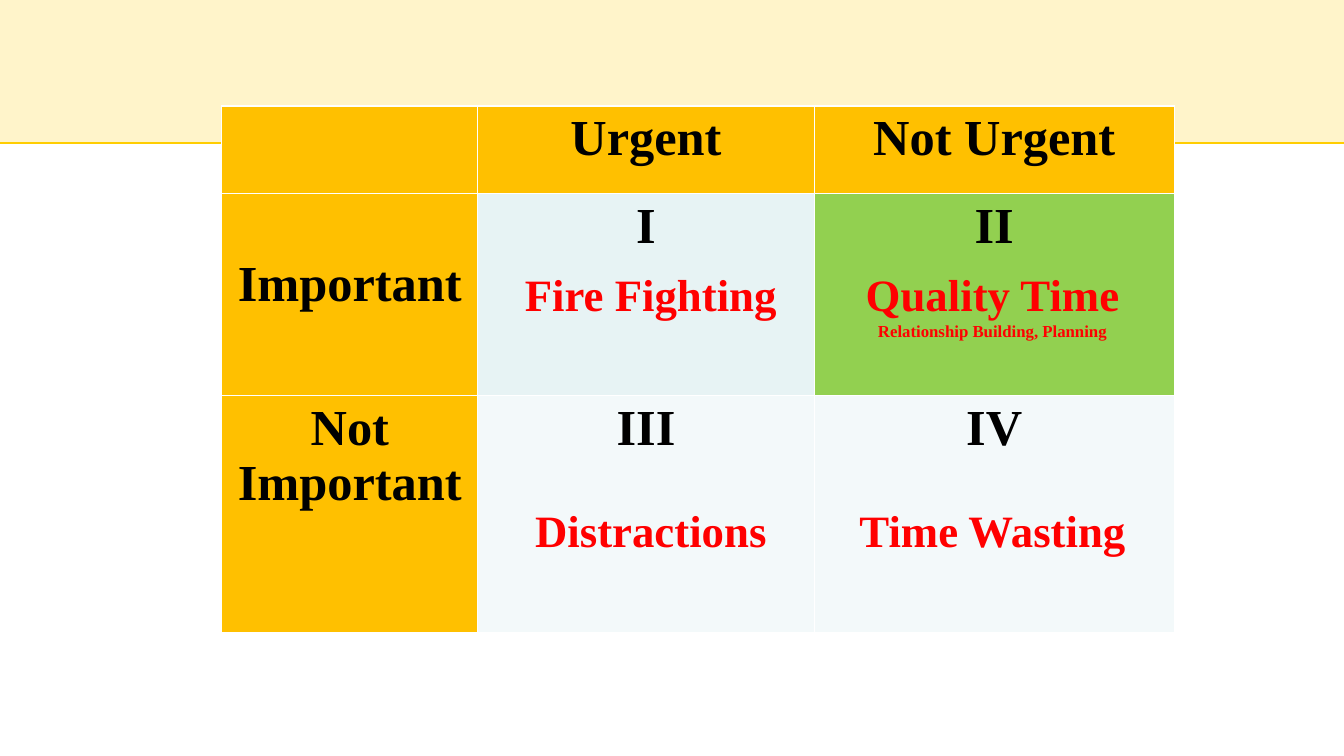
from lxml.etree import SubElement
from pptx import Presentation
from pptx.dml.color import RGBColor
from pptx.enum.shapes import MSO_CONNECTOR, MSO_SHAPE
from pptx.enum.text import PP_ALIGN
from pptx.oxml.ns import qn
from pptx.util import Cm, Pt

BLACK = RGBColor(0x00, 0x00, 0x00)
RED = RGBColor(0xFF, 0x00, 0x00)
YELLOW = RGBColor(0xFF, 0xCD, 0x00)
GOLD = RGBColor(0xFF, 0xC0, 0x00)
GREEN = RGBColor(0x92, 0xD0, 0x50)
MIST = RGBColor(0xE7, 0xF3, 0xF4)
PALE = RGBColor(0xF3, 0xF9, 0xFA)

MATRIX = [
    [("", GOLD), ("Urgent", GOLD), ("Not Urgent", GOLD)],
    [("Important", GOLD), ("I", MIST), ("II", GREEN)],
    [("Not Important", GOLD), ("III", PALE), ("IV", PALE)],
]
# Each label: column, row, lines with their sizes
QUADRANT_LABELS = [
    (0, 0, [("Fire Fighting", 32)]),
    (1, 0, [("Quality Time", 32), ("Relationship Building, Planning", 12)]),
    (1, 1, [("Time Wasting", 32)]),
    (0, 1, [("Distractions", 32)]),
]

SLIDE_WIDTH, SLIDE_HEIGHT = Cm(33.87), Cm(19.05)
BAND_HEIGHT = Cm(3.61)
TABLE_LEFT, TABLE_TOP = Cm(5.59), Cm(2.67)
COLUMN_WIDTHS = [Cm(6.45), Cm(8.48), Cm(9.07)]
ROW_HEIGHTS = [Cm(2.21), Cm(5.08), Cm(5.97)]
LABEL_LEFTS = [Cm(10.69), Cm(19.3)]
LABEL_TOPS = [Cm(6.6), Cm(12.55)]
LABEL_WIDTH, LINE_HEIGHT = Cm(11.43), Cm(1.63)
IMPORTANT_MARGIN = Cm(1.59)


def write_line(paragraph, text, size, color):
    paragraph.alignment = PP_ALIGN.CENTER
    run = paragraph.add_run()
    run.text = text
    run.font.color.rgb = color
    font_format = {"name": "Times New Roman", "size": Pt(size), "bold": True}
    for name, value in font_format.items():
        setattr(run.font, name, value)


def add_header_band(slide):
    line = slide.shapes.add_connector(
        MSO_CONNECTOR.STRAIGHT, 0, BAND_HEIGHT, SLIDE_WIDTH, BAND_HEIGHT)
    line.line.color.rgb = YELLOW
    line.line.width = Pt(1.75)
    SubElement(line._element.spPr, qn("a:effectLst"))
    for _ in range(2):  # two sheer layers deepen the tint
        band = slide.shapes.add_shape(
            MSO_SHAPE.RECTANGLE, 0, 0, SLIDE_WIDTH, BAND_HEIGHT)
        band.shadow.inherit = False
        band.line.fill.background()
        band.fill.solid()
        band.fill.fore_color.rgb = YELLOW
        color = band._element.spPr.find(".//" + qn("a:srgbClr"))
        SubElement(color, qn("a:alpha"), val="11000")


def add_matrix(slide):
    table = slide.shapes.add_table(
        len(ROW_HEIGHTS), len(COLUMN_WIDTHS), TABLE_LEFT, TABLE_TOP,
        sum(COLUMN_WIDTHS), sum(ROW_HEIGHTS)).table
    table.horz_banding = False
    for column, width in zip(table.columns, COLUMN_WIDTHS):
        column.width = width
    for row, height, contents in zip(table.rows, ROW_HEIGHTS, MATRIX):
        row.height = height
        for cell, (text, fill) in zip(row.cells, contents):
            cell.fill.solid()
            cell.fill.fore_color.rgb = fill
            if text:
                write_line(cell.text_frame.paragraphs[0], text, 36, BLACK)
    table.cell(1, 0).margin_top = IMPORTANT_MARGIN


def add_quadrant_label(slide, column, row, lines):
    box = slide.shapes.add_textbox(
        LABEL_LEFTS[column], LABEL_TOPS[row], LABEL_WIDTH,
        LINE_HEIGHT + Cm(0.5) * (len(lines) - 1))
    frame = box.text_frame
    frame.word_wrap = True
    for index, (text, size) in enumerate(lines):
        paragraph = frame.add_paragraph() if index else frame.paragraphs[0]
        write_line(paragraph, text, size, RED)


def main():
    presentation = Presentation()
    presentation.slide_width = SLIDE_WIDTH
    presentation.slide_height = SLIDE_HEIGHT
    slide = presentation.slides.add_slide(presentation.slide_layouts[6])
    add_header_band(slide)
    add_matrix(slide)
    for label in QUADRANT_LABELS:
        add_quadrant_label(slide, *label)
    presentation.save("out.pptx")


if __name__ == "__main__":
    main()
